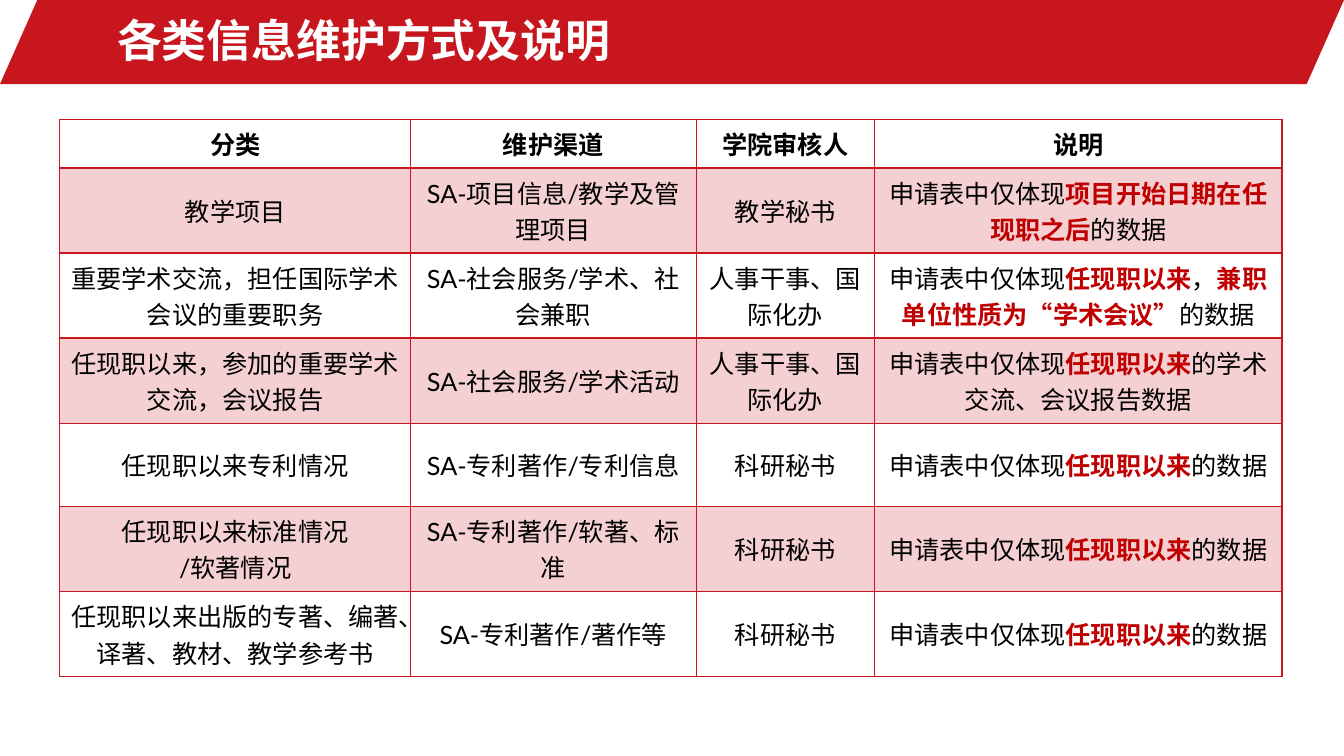
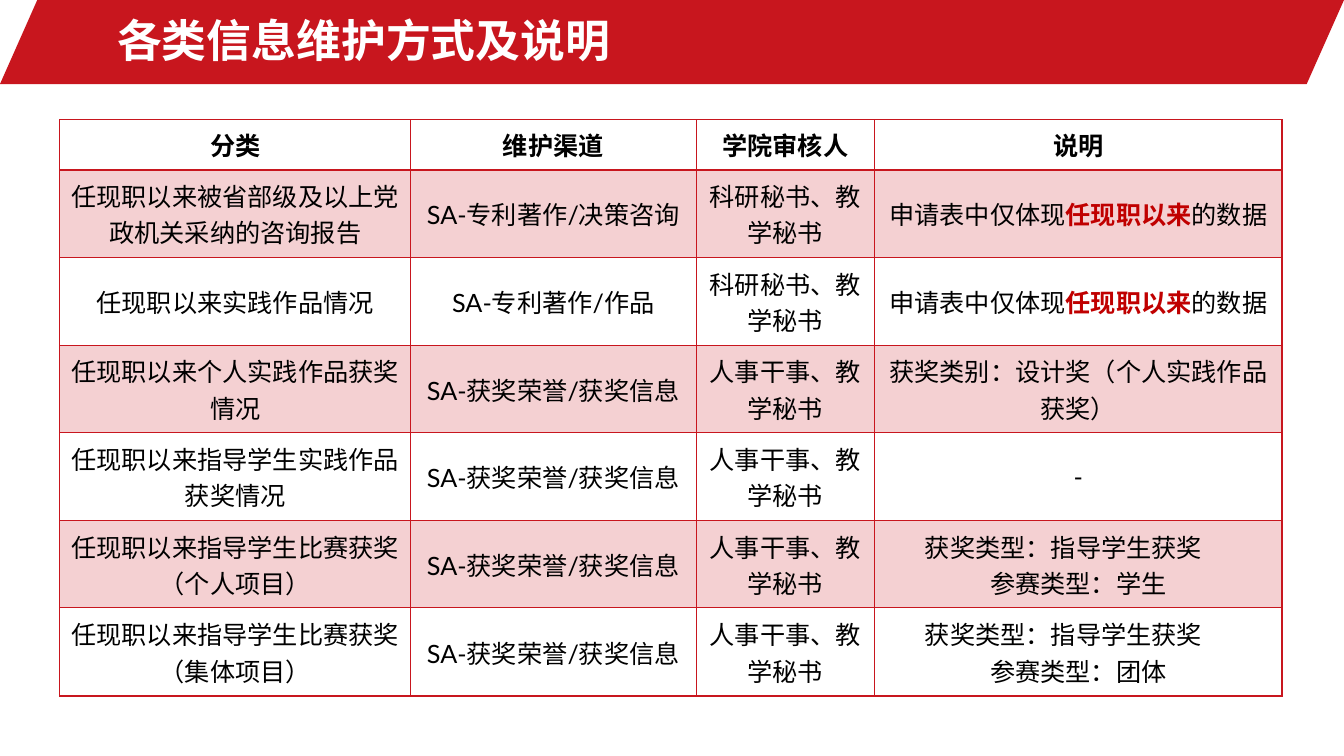
"""Builds two slides of tables on how each kind of record is maintained."""
from dataclasses import dataclass

from lxml import etree
from pptx import Presentation
from pptx.dml.color import RGBColor
from pptx.enum.shapes import MSO_SHAPE, PP_PLACEHOLDER
from pptx.enum.text import MSO_ANCHOR, MSO_AUTO_SIZE, PP_ALIGN
from pptx.oxml.ns import qn
from pptx.util import Pt

PX = 9525
LEFT, CENTER = PP_ALIGN.LEFT, PP_ALIGN.CENTER
MIDDLE = MSO_ANCHOR.MIDDLE
NO_FIT = MSO_AUTO_SIZE.NONE
PARALLELOGRAM = MSO_SHAPE.PARALLELOGRAM
TITLE = PP_PLACEHOLDER.TITLE

FONT = "Lato"
RED, DARK_RED, BLACK, WHITE = "C8161E", "C00000", "000000", "FFFFFF"
SLIDE_W, SLIDE_H, BAND_H = 1280, 720, 80
TITLE_BOX = (102, 7, 1172, 62)
TABLE_LEFT, TABLE_TOP = 57, 114
COL_WIDTHS = (334, 272, 170, 388)
HEADING = "各类信息维护方式及说明"
HEADERS = ("分类", "维护渠道", "学院审核人", "说明")
SINCE = "申请表中仅体现**任现职以来**的数据"
AWARD = "SA-获奖荣誉/获奖信息"
RESEARCH, PERSONNEL = "科研秘书", "人事干事、国际化办"
RESEARCH_TEACHING, PERSONNEL_TEACHING = "科研秘书、教学秘书", "人事干事、教学秘书"


@dataclass
class Row:
    """One table row; ** encloses emphasis, shift moves the note's first line left."""
    category: str
    channel: str
    reviewer: str
    note: str
    height: int
    shift: int = 0


@dataclass
class Sheet:
    """The table of one slide."""
    header_height: int
    rows: list[Row]


SHEETS = [
    Sheet(46, [
        Row("教学项目", "SA-项目信息/教学及管理项目", "教学秘书",
            "申请表中仅体现**项目开始日期在任现职之后**的数据", 81),
        Row("重要学术交流，担任国际学术会议的重要职务", "SA-社会服务/学术、社会兼职", PERSONNEL,
            "申请表中仅体现**任现职以来**，**兼职单位性质为“学术会议”**的数据", 81),
        Row("任现职以来，参加的重要学术交流，会议报告", "SA-社会服务/学术活动", PERSONNEL,
            "申请表中仅体现**任现职以来**的学术交流、会议报告数据", 81),
        Row("任现职以来专利情况", "SA-专利著作/专利信息", RESEARCH, SINCE, 79),
        Row("任现职以来标准情况\n/软著情况", "SA-专利著作/软著、标准", RESEARCH, SINCE, 81),
        Row("任现职以来出版的专著、编著、译著、教材、教学参考书", "SA-专利著作/著作等",
            RESEARCH, SINCE, 81),
    ]),
    Sheet(48, [
        Row("任现职以来被省部级及以上党政机关采纳的咨询报告", "SA-专利著作/决策咨询",
            RESEARCH_TEACHING, SINCE, 83),
        Row("任现职以来实践作品情况", "SA-专利著作/作品", RESEARCH_TEACHING, SINCE, 84),
        Row("任现职以来个人实践作品获奖情况", AWARD, PERSONNEL_TEACHING,
            "获奖类别：设计奖（个人实践作品获奖）", 83),
        Row("任现职以来指导学生实践作品获奖情况", AWARD, PERSONNEL_TEACHING, "-", 84),
        Row("任现职以来指导学生比赛获奖（个人项目）", AWARD, PERSONNEL_TEACHING,
            "获奖类型：指导学生获奖\n参赛类型：学生", 83, 28),
        Row("任现职以来指导学生比赛获奖（集体项目）", AWARD, PERSONNEL_TEACHING,
            "获奖类型：指导学生获奖\n参赛类型：团体", 84, 28),
    ]),
]


def px(n: int) -> int:
    """Turn px into EMU."""
    return n * PX


def color(value: str) -> RGBColor:
    """Turn a hex string into a colour."""
    return RGBColor.from_string(value)


def set_font(font, size: int, value: str, bold: bool) -> None:
    """Apply the shared typeface with a size, colour and weight."""
    font.name, font.size, font.bold = FONT, Pt(size), bold
    font.color.rgb = color(value)


def prepare_layout(layout) -> None:
    """Keep only the title placeholder of the layout and move it onto the band."""
    for ph in list(layout.placeholders):
        if ph.placeholder_format.type == TITLE:
            ph.left, ph.top, ph.width, ph.height = map(px, TITLE_BOX)
        else:
            ph.element.getparent().remove(ph.element)


def add_band(s, layout) -> None:
    """Draw the red heading band and place it at the back of the layout."""
    sp = s.shapes.add_shape(PARALLELOGRAM, 0, 0, px(SLIDE_W), px(BAND_H))
    sp.adjustments[0] = 0.444
    sp.shadow.inherit = False
    sp.fill.solid()
    sp.fill.fore_color.rgb = color(RED)
    sp.line.fill.background()
    layout.shapes.element.insert(2, sp.element)


def set_title(s) -> None:
    """Write the heading into the title placeholder."""
    tf = s.shapes.title.text_frame
    tf.text = HEADING
    tf.auto_size, tf.vertical_anchor, tf.word_wrap = NO_FIT, MIDDLE, True
    p = tf.paragraphs[0]
    p.alignment = LEFT
    set_font(p.font, 32, WHITE, True)


def fill_cell(cell, shaded: bool) -> None:
    """Give a cell a translucent red fill or none."""
    if not shaded:
        cell.fill.background()
        return
    cell.fill.solid()
    cell.fill.fore_color.rgb = color(RED)
    clr = cell._tc.get_or_add_tcPr().find(".//" + qn("a:srgbClr"))
    etree.SubElement(clr, qn("a:alpha"), val="20000")


def set_borders(cell, top: int, bottom: int) -> None:
    """Draw red cell borders with the given top and bottom widths in points."""
    tc_pr = cell._tc.get_or_add_tcPr()
    widths = {"lnL": 1, "lnR": 1, "lnT": top, "lnB": bottom}
    for i, (tag, width) in enumerate(widths.items()):
        ln = etree.Element(qn("a:" + tag), w=str(Pt(width)))
        fill = etree.SubElement(ln, qn("a:solidFill"))
        etree.SubElement(fill, qn("a:srgbClr"), val=RED)
        tc_pr.insert(i, ln)


def write_cell(cell, text: str, bold: bool = False, shift: int = 0) -> None:
    """Write centred paragraphs with emphasised runs."""
    cell.vertical_anchor = MIDDLE
    if shift:
        cell.margin_right += px(shift)
    tf = cell.text_frame
    for i, line in enumerate(text.split("\n")):
        p = tf.add_paragraph() if i else tf.paragraphs[0]
        p.alignment = CENTER
        if i and shift:
            p._p.get_or_add_pPr().set("marL", str(px(shift)))
        set_font(p.font, 18, BLACK, bold)
        for j, part in enumerate(line.split("**")):
            r = p.add_run()
            r.text = part
            if j % 2:
                r.font.bold = True
                r.font.color.rgb = color(DARK_RED)


def add_sheet(s, sheet: Sheet) -> None:
    """Add the table of one slide."""
    heights = [sheet.header_height] + [row.height for row in sheet.rows]
    tbl = s.shapes.add_table(len(heights), len(COL_WIDTHS), px(TABLE_LEFT), px(TABLE_TOP),
                             px(sum(COL_WIDTHS)), px(sum(heights))).table
    tbl.first_row = tbl.horz_banding = False
    for col, width in zip(tbl.columns, COL_WIDTHS):
        col.width = px(width)
    for i, height in enumerate(heights):
        tbl.rows[i].height = px(height)
        for cell in tbl.rows[i].cells:
            fill_cell(cell, i % 2 == 1)
            set_borders(cell, 2 if i == 1 else 1, 2 if i == 0 else 1)
    for cell, text in zip(tbl.rows[0].cells, HEADERS):
        write_cell(cell, text, bold=True)
    for i, row in enumerate(sheet.rows, 1):
        for j, text in enumerate((row.category, row.channel, row.reviewer)):
            write_cell(tbl.cell(i, j), text)
        write_cell(tbl.cell(i, 3), row.note, shift=row.shift)


def main() -> None:
    """Build and save the presentation."""
    prs = Presentation()
    prs.slide_width, prs.slide_height = px(SLIDE_W), px(SLIDE_H)
    layout = prs.slide_layouts[5]
    prepare_layout(layout)
    for i, sheet in enumerate(SHEETS):
        s = prs.slides.add_slide(layout)
        if i == 0:
            add_band(s, layout)
        set_title(s)
        add_sheet(s, sheet)
    prs.save("out.pptx")


if __name__ == "__main__":
    main()
